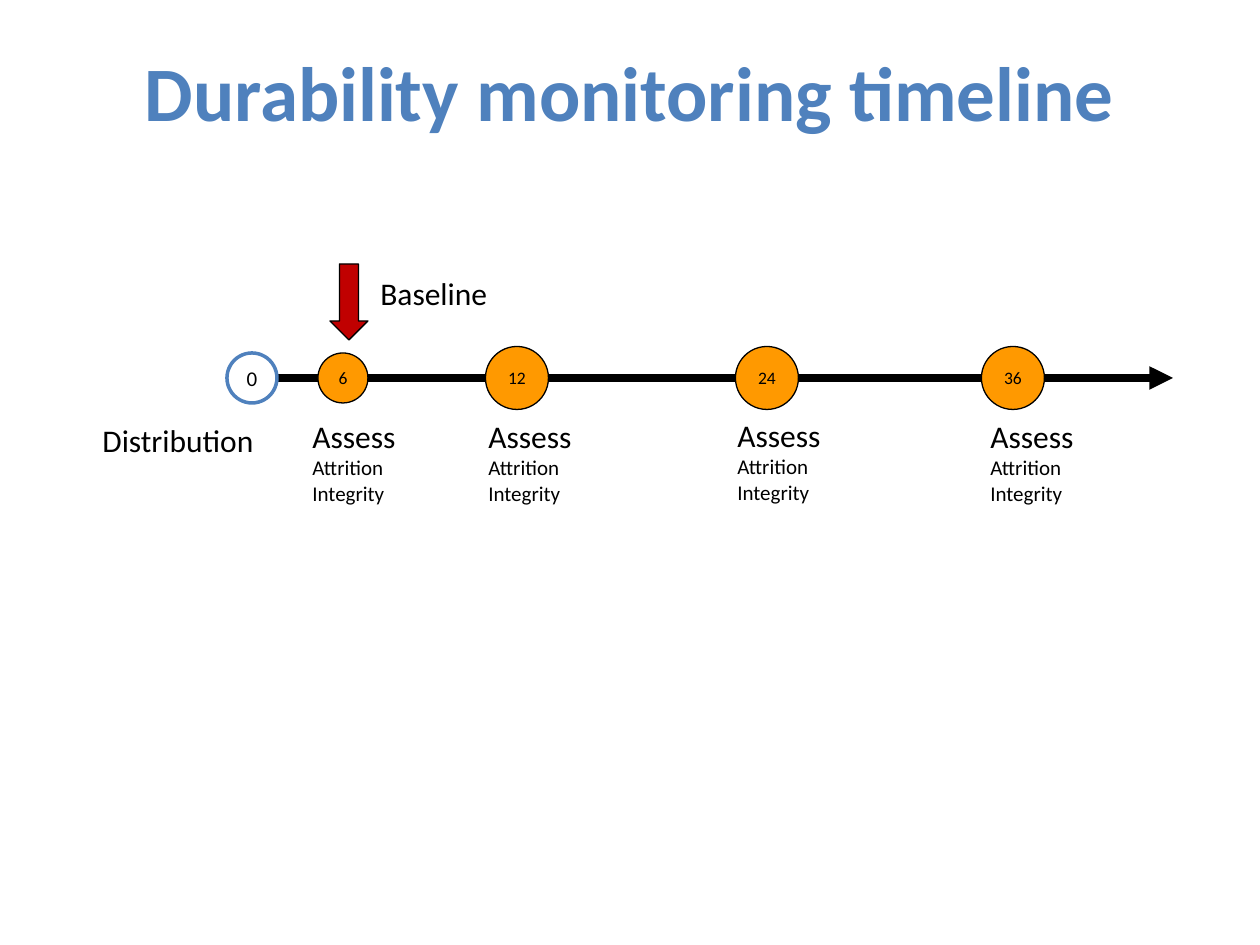
"""Build the durability monitoring timeline slide."""
from dataclasses import dataclass

from lxml import etree
from pptx import Presentation
from pptx.dml.color import RGBColor
from pptx.enum.shapes import MSO_CONNECTOR, MSO_SHAPE
from pptx.enum.text import MSO_ANCHOR, PP_ALIGN
from pptx.oxml.ns import qn
from pptx.util import Pt

LEFT, CENTER, RIGHT = PP_ALIGN.LEFT, PP_ALIGN.CENTER, PP_ALIGN.RIGHT
TOP, MIDDLE = MSO_ANCHOR.TOP, MSO_ANCHOR.MIDDLE
OVAL, DOWN_ARROW = MSO_SHAPE.OVAL, MSO_SHAPE.DOWN_ARROW
STRAIGHT = MSO_CONNECTOR.STRAIGHT
PX = 914400 // 126


@dataclass(frozen=True)
class Theme:
    font: str = "Calibri"
    ink: str = "000000"
    accent: str = "4F81BD"
    paper: str = "FFFFFF"
    milestone: str = "FF9900"
    baseline: str = "C00000"
    title_size: int = 44
    label_size: int = 18
    detail_size: int = 12
    month_size: int = 10
    outline: float = 0.75
    start_outline: float = 2
    axis: float = 4.5


THEME = Theme()
TITLE = "Durability monitoring timeline"
START_MONTH, START_LABEL = "0", "Distribution"
BASELINE_LABEL = "Baseline"
ASSESSMENT = [
    ("Assess", THEME.label_size),
    ("Attrition", THEME.detail_size),
    ("Integrity", THEME.detail_size),
]
AXIS_Y, AXIS_START, AXIS_END = 378, 243, 1173
START_X, START_DIAMETER = 252, 50
MILESTONES = [
    {"month": "6", "x": 343, "diameter": 50, "label_at": (300, 411)},
    {"month": "12", "x": 517, "diameter": 63, "label_at": (476, 411)},
    {"month": "24", "x": 767, "diameter": 63, "label_at": (725, 410)},
    {"month": "36", "x": 1013, "diameter": 63, "label_at": (978, 411)},
]


def emu(*lengths):
    return [round(length * PX) for length in lengths]


def rgb(color):
    return RGBColor.from_string(color)


def write(frame, lines, align=LEFT, anchor=TOP, color=THEME.ink, bold=False):
    frame.vertical_anchor = anchor
    for index, (words, size) in enumerate(lines):
        paragraph = frame.paragraphs[0] if index == 0 else frame.add_paragraph()
        paragraph.alignment = align
        run = paragraph.add_run()
        run.text = words
        run.font.name = THEME.font
        run.font.size = Pt(size)
        run.font.bold = bold
        run.font.color.rgb = rgb(color)


def add_label(slide, box, lines, **style):
    label = slide.shapes.add_textbox(*emu(*box))
    label.text_frame.word_wrap = True
    write(label.text_frame, lines, **style)


def add_figure(slide, preset, box, fill, line=THEME.ink, width=THEME.outline):
    figure = slide.shapes.add_shape(preset, *emu(*box))
    figure.shadow.inherit = False
    figure.fill.solid()
    figure.fill.fore_color.rgb = rgb(fill)
    figure.line.color.rgb = rgb(line)
    figure.line.width = Pt(width)
    return figure


def add_month(slide, month, x, diameter, size, *colors):
    box = (x - diameter / 2, AXIS_Y - diameter / 2, diameter, diameter)
    frame = add_figure(slide, OVAL, box, *colors).text_frame
    frame.margin_left = frame.margin_right = 0
    frame.margin_top = frame.margin_bottom = 0
    frame.word_wrap = False
    write(frame, [(month, size)], align=CENTER, anchor=MIDDLE)


def add_axis(slide):
    axis = slide.shapes.add_connector(
        STRAIGHT, *emu(AXIS_START, AXIS_Y, AXIS_END, AXIS_Y))
    axis.line.color.rgb = rgb(THEME.ink)
    axis.line.width = Pt(THEME.axis)
    etree.SubElement(axis.line._get_or_add_ln(), qn("a:tailEnd"), type="triangle")
    etree.SubElement(axis._element.spPr, qn("a:effectLst"))


def main():
    deck = Presentation()
    deck.slide_width, deck.slide_height = emu(1260, 945)
    slide = deck.slides.add_slide(deck.slide_layouts[6])

    add_label(slide, (63, 38, 1134, 158), [(TITLE, THEME.title_size)],
              align=CENTER, color=THEME.accent, bold=True)
    add_axis(slide)
    add_month(slide, START_MONTH, START_X, START_DIAMETER, THEME.detail_size,
              THEME.paper, THEME.accent, THEME.start_outline)
    add_label(slide, (74, 415, 192, 50), [(START_LABEL, THEME.label_size)],
              align=RIGHT)
    add_figure(slide, DOWN_ARROW, (330, 264, 38, 76), THEME.baseline)
    add_label(slide, (368, 268, 406, 50), [(BASELINE_LABEL, THEME.label_size)])
    for stop in MILESTONES:
        add_month(slide, stop["month"], stop["x"], stop["diameter"],
                  THEME.month_size, THEME.milestone)
        add_label(slide, (*stop["label_at"], 141, 102), ASSESSMENT)

    deck.save("out.pptx")


if __name__ == "__main__":
    main()
